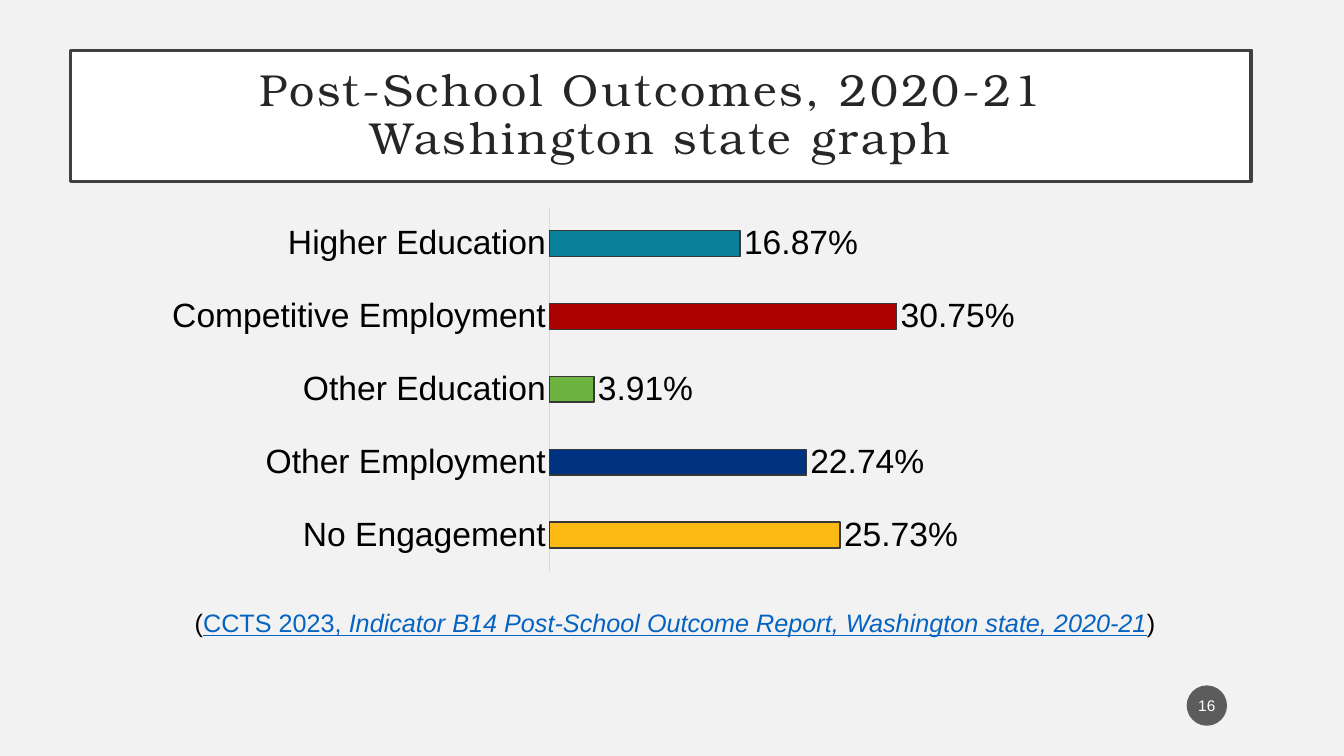
from dataclasses import dataclass

from lxml import etree
from pptx import Presentation
from pptx.chart.data import CategoryChartData
from pptx.dml.color import RGBColor
from pptx.enum.chart import XL_CHART_TYPE, XL_LABEL_POSITION, XL_TICK_MARK
from pptx.enum.shapes import MSO_SHAPE
from pptx.enum.text import MSO_ANCHOR, PP_ALIGN
from pptx.oxml.ns import qn
from pptx.util import Inches, Pt

BAR_CLUSTERED = XL_CHART_TYPE.BAR_CLUSTERED
OUTSIDE_END = XL_LABEL_POSITION.OUTSIDE_END
NO_TICK = XL_TICK_MARK.NONE
RECTANGLE = MSO_SHAPE.RECTANGLE
OVAL = MSO_SHAPE.OVAL
MIDDLE = MSO_ANCHOR.MIDDLE
CENTER = PP_ALIGN.CENTER


@dataclass(frozen=True)
class Theme:
    """Colours, fonts and type sizes of the slide."""
    background: str = "F2F2F2"
    white: str = "FFFFFF"
    black: str = "000000"
    title_text: str = "262626"
    title_border: str = "404040"
    badge: str = "1D1D1D"
    axis: str = "D9D9D9"
    bar_border: str = "393839"
    link: str = "0563C1"
    title_font: str = "TeX Gyre Bonum"
    body_font: str = "Arial"
    title_size: int = 32
    chart_size: int = 24
    source_size: int = 18
    badge_size: int = 11


THEME = Theme()
PERCENT = "0.00%"
OUTCOMES = [
    ("Higher Education", 0.1687, "088099"),
    ("Competitive Employment", 0.3075, "AA0000"),
    ("Other Education", 0.0391, "6CB33F"),
    ("Other Employment", 0.2274, "003282"),
    ("No Engagement", 0.2573, "FDB913"),
]
PLOT_AREA = {"x": 0.363, "y": 0.089, "w": 0.494, "h": 0.778}


def rgb(value):
    """Turn a hex string into a colour."""
    return RGBColor.from_string(value)


def paint(fill, color):
    """Give a fill one solid colour."""
    fill.solid()
    fill.fore_color.rgb = rgb(color)


def style_font(font, name, size, color):
    """Set the face, size and colour of a font."""
    font.name = name
    font.size = Pt(size)
    font.color.rgb = rgb(color)


def outline(line, color, width):
    """Set the colour and width of a line."""
    line.color.rgb = rgb(color)
    line.width = Pt(width)


def add_panel(slide, kind, box, color, margins):
    """Add a filled, unlined shape with centred text and return it."""
    panel = slide.shapes.add_shape(kind, *map(Inches, box))
    panel.shadow.inherit = False
    paint(panel.fill, color)
    panel.line.fill.background()
    frame = panel.text_frame
    frame.word_wrap = True
    frame.vertical_anchor = MIDDLE
    frame.margin_left = frame.margin_right = Inches(margins[0])
    frame.margin_top = frame.margin_bottom = Inches(margins[1])
    frame.paragraphs[0].alignment = CENTER
    return panel


def add_title(slide, text):
    """Add the framed, letter-spaced title."""
    title = add_panel(slide, RECTANGLE, (0.7, 0.5, 11.71, 1.3), THEME.white, (0.2, 0.2))
    outline(title.line, THEME.title_border, 2.5)
    heading = title.text_frame.paragraphs[0]
    heading.text = text
    heading.line_spacing = 0.9
    style_font(heading.font, THEME.title_font, THEME.title_size, THEME.title_text)
    for run in heading.runs:
        run.font._element.set("spc", "200")


def add_page_badge(slide, number):
    """Add the translucent circle with the page number."""
    badge = add_panel(slide, OVAL, (11.77, 6.8, 0.4, 0.4), THEME.badge, (0.02, 0.05))
    color = badge._element.spPr.find(qn("a:solidFill"))[0]
    etree.SubElement(color, qn("a:alpha")).set("val", "70000")
    page = badge.text_frame.paragraphs[0]
    page.text = number
    style_font(page.font, THEME.body_font, THEME.badge_size, THEME.white)


def place_plot(chart):
    """Fix the inner plot area as fractions of the chart."""
    plot_area = chart._chartSpace.chart.plotArea
    for old_layout in plot_area.findall(qn("c:layout")):
        plot_area.remove(old_layout)
    layout = etree.Element(qn("c:layout"))
    manual = etree.SubElement(layout, qn("c:manualLayout"))
    settings = {"layoutTarget": "inner", "xMode": "edge", "yMode": "edge", **PLOT_AREA}
    for tag, value in settings.items():
        etree.SubElement(manual, qn(f"c:{tag}")).set("val", str(value))
    plot_area.insert(0, layout)


def add_outcome_chart(slide):
    """Add the bar chart of outcomes, one colour to a category."""
    data = CategoryChartData(number_format=PERCENT)
    data.categories = [name for name, _, _ in OUTCOMES]
    data.add_series("Series 1", [share for _, share, _ in OUTCOMES])
    box = map(Inches, (1.34, 1.64, 11.33, 4.65))
    chart = slide.shapes.add_chart(BAR_CLUSTERED, *box, data).chart
    chart.has_title = False
    chart.has_legend = False
    style_font(chart.font, THEME.body_font, THEME.chart_size, THEME.black)
    place_plot(chart)

    categories = chart.category_axis
    categories.reverse_order = True
    categories.major_tick_mark = categories.minor_tick_mark = NO_TICK
    outline(categories.format.line, THEME.axis, 0.75)
    shares = chart.value_axis
    shares.visible = False
    shares.has_major_gridlines = False
    shares.minimum_scale, shares.maximum_scale = 0, 0.5

    plot = chart.plots[0]
    plot.gap_width = 182
    plot.vary_by_categories = False
    bars = plot.series[0]
    for index, (_, _, color) in enumerate(OUTCOMES):
        bar = bars.points[index].format
        paint(bar.fill, color)
        outline(bar.line, THEME.bar_border, 1)
    labels = bars.data_labels
    labels.show_value = True
    labels.position = OUTSIDE_END
    labels.number_format = PERCENT
    labels.number_format_is_linked = False
    style_font(labels.font, THEME.body_font, THEME.chart_size, THEME.black)


def add_source(slide, parts):
    """Add the citation from (text, is_link, is_italic) parts."""
    box = map(Inches, (0.7, 5.98, 12.06, 0.4))
    frame = slide.shapes.add_textbox(*box).text_frame
    frame.word_wrap = True
    citation = frame.paragraphs[0]
    citation.alignment = CENTER
    style_font(citation.font, THEME.body_font, THEME.source_size, THEME.black)
    for text, is_link, is_italic in parts:
        run = citation.add_run()
        run.text = text
        run.font.italic = is_italic
        run.font.underline = is_link
        run.font.color.rgb = rgb(THEME.link if is_link else THEME.black)


def main():
    """Build and save the slide."""
    deck = Presentation()
    deck.slide_width, deck.slide_height = Inches(13.33), Inches(7.5)
    slide = deck.slides.add_slide(deck.slide_layouts[6])
    paint(slide.background.fill, THEME.background)
    add_title(slide, "Post-School Outcomes, 2020-21 \vWashington state graph")
    add_page_badge(slide, "16")
    add_outcome_chart(slide)
    add_source(slide, [
        ("(", False, False),
        ("CCTS 2023, ", True, False),
        ("Indicator B14 Post-School Outcome Report, Washington state, 2020-21", True, True),
        (") ", False, False),
    ])
    deck.save("out.pptx")


if __name__ == "__main__":
    main()
